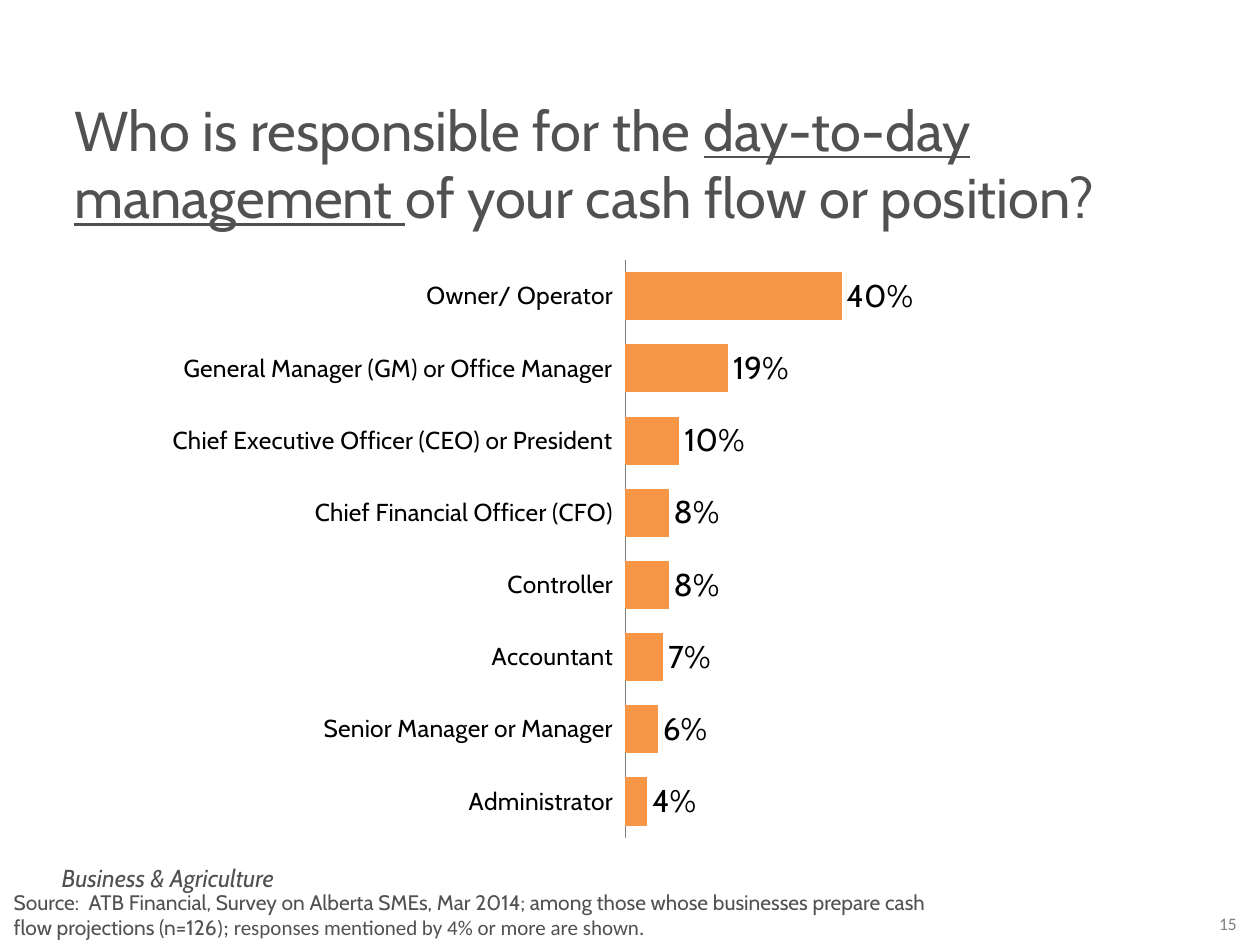
from pptx import Presentation
from pptx.chart.data import CategoryChartData
from pptx.dml.color import RGBColor
from pptx.enum.chart import XL_CHART_TYPE as ChartType, XL_LABEL_POSITION as LabelPos
from pptx.enum.chart import XL_TICK_LABEL_POSITION as TickLabelPos, XL_TICK_MARK as TickMark
from pptx.enum.text import MSO_ANCHOR as Anchor, MSO_AUTO_SIZE as AutoSize, PP_ALIGN as Align
from pptx.oxml import parse_xml
from pptx.oxml.ns import nsdecls
from pptx.util import Inches, Pt

# Content
TITLE = [
    ("Who is responsible for the ", {}),
    ("day-to-day management ", {"underline": True}),
    ("of your cash flow or position?", {}),
]
RESPONSES = [
    ("Owner/ Operator", 0.40),
    ("General Manager (GM) or Office Manager", 0.19),
    ("Chief Executive Officer (CEO) or President", 0.10),
    ("Chief Financial Officer (CFO)", 0.08),
    ("Controller", 0.08),
    ("Accountant", 0.07),
    ("Senior Manager or Manager", 0.06),
    ("Administrator", 0.04),
]
SEGMENT = [("Business & Agriculture", {"italic": True})]
SOURCE = [
    ("Source:  ATB Financial, Survey on Alberta SMEs, Mar 2014; among those "
     "whose businesses prepare cash flow projections (n=126", {}),
    ("); responses mentioned by 4% or more are shown.", {"name": "Calibri"}),
]
PAGE = [("15", {"name": "Calibri"})]

# Theme
THEME = {
    "font": "Cabin",
    "text": RGBColor(0x50, 0x51, 0x50),
    "muted": RGBColor(0x80, 0x80, 0x80),
    "black": RGBColor(0, 0, 0),
    "bar": RGBColor(0xF7, 0x96, 0x46),
    "title": Pt(32),
    "value": Pt(18),
    "label": Pt(14),
    "source": Pt(12),
    "page": Pt(10),
}

# Left, top, width, height in inches
PLACES = {
    "title": (0.49, 0.7, 8.83, 1.18),
    "chart": (1.26, 2.06, 6.99, 4.78),
    "segment": (0.39, 6.8, 2.81, 0.34),
    "source": (0.01, 7.01, 7.76, 0.5),
    "page": (9.5, 7.2, 0.49, 0.27),
}
PLOT = {"x": 0.53, "y": 0, "w": 0.46, "h": 0.96}  # shares of the chart area


def place(part):
    return [Inches(length) for length in PLACES[part]]


def set_font(font, size, color, **extra):
    values = {"name": THEME["font"], "size": THEME[size], **extra}
    for attribute, value in values.items():
        setattr(font, attribute, value)
    font.color.rgb = THEME[color]


def write(frame, runs, size, color="text", align=Align.LEFT, anchor=Anchor.TOP):
    frame.word_wrap = True
    frame.auto_size = AutoSize.NONE
    frame.vertical_anchor = anchor
    paragraph = frame.paragraphs[0]
    paragraph.alignment = align
    for text, extra in runs:
        run = paragraph.add_run()
        run.text = text
        set_font(run.font, size, color, **extra)


def add_title(slide):
    title = slide.shapes.title
    title.left, title.top, title.width, title.height = place("title")
    write(title.text_frame, TITLE, "title", anchor=Anchor.MIDDLE)


def add_responses(slide):
    data = CategoryChartData(number_format="0%")
    data.categories = [role for role, _ in RESPONSES]
    data.add_series("Series 1", [share for _, share in RESPONSES])
    chart = slide.shapes.add_chart(ChartType.BAR_CLUSTERED, *place("chart"), data).chart
    chart.has_legend = chart.has_title = False
    set_font(chart.font, "label", "black")

    # Axes: roles run downwards, shares are read from the bar labels
    roles, shares = chart.category_axis, chart.value_axis
    roles.reverse_order = True
    roles.major_tick_mark = TickMark.NONE
    roles.tick_label_position = TickLabelPos.LOW
    roles.format.line.color.rgb = THEME["muted"]
    set_font(roles.tick_labels.font, "label", "black")
    shares.minimum_scale, shares.maximum_scale = 0, 0.75
    shares.has_major_gridlines = False
    shares.visible = False

    # Bars and their labels
    plot = chart.plots[0]
    plot.gap_width = 50
    plot.vary_by_categories = False
    bars = plot.series[0]
    bars.format.fill.solid()
    bars.format.fill.fore_color.rgb = THEME["bar"]
    labels = bars.data_labels
    label_format = {
        "show_value": True,
        "number_format": "0%",
        "number_format_is_linked": False,
        "position": LabelPos.OUTSIDE_END,
    }
    for attribute, value in label_format.items():
        setattr(labels, attribute, value)
    set_font(labels.font, "value", "black")

    # Fixed plot area
    area = chart._chartSpace.chart.plotArea
    for automatic in area.findall("{*}layout"):
        area.remove(automatic)
    modes = "".join(f'<c:{side}Mode val="edge"/>' for side in "xy")
    sizes = "".join(f'<c:{side} val="{share}"/>' for side, share in PLOT.items())
    area.insert(0, parse_xml(
        f'<c:layout {nsdecls("c")}><c:manualLayout><c:layoutTarget val="inner"/>'
        f"{modes}{sizes}</c:manualLayout></c:layout>"))


def add_footer(slide):
    footer = {
        "segment": (SEGMENT, {"size": "label"}),
        "source": (SOURCE, {"size": "source"}),
        "page": (PAGE, {"size": "page", "color": "muted", "align": Align.CENTER}),
    }
    for part, (runs, style) in footer.items():
        write(slide.shapes.add_textbox(*place(part)).text_frame, runs, **style)


def main():
    deck = Presentation()
    deck.slide_width, deck.slide_height = Inches(10), Inches(7.5)
    slide = deck.slides.add_slide(deck.slide_layouts[5])
    add_title(slide)
    add_responses(slide)
    add_footer(slide)
    deck.save("out.pptx")


if __name__ == "__main__":
    main()
